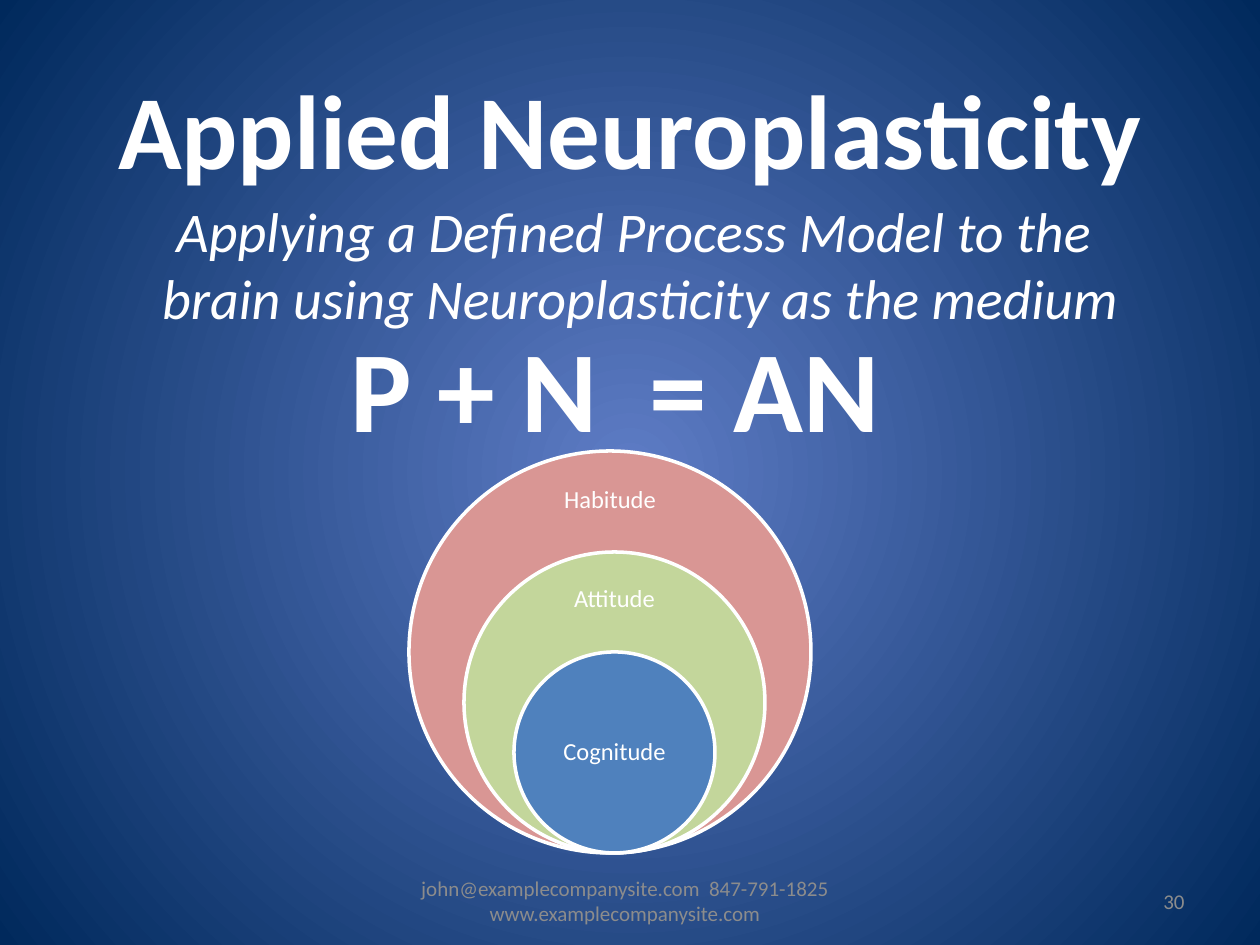
from lxml import etree
from pptx import Presentation
from pptx.dml.color import RGBColor
from pptx.enum.shapes import MSO_SHAPE
from pptx.enum.text import MSO_ANCHOR, MSO_AUTO_SIZE, PP_ALIGN
from pptx.util import Emu, Inches, Pt

OVAL = MSO_SHAPE.OVAL
TOP, MIDDLE = MSO_ANCHOR.TOP, MSO_ANCHOR.MIDDLE
CENTER, RIGHT = PP_ALIGN.CENTER, PP_ALIGN.RIGHT
WHITE = RGBColor(0xFF, 0xFF, 0xFF)
GRAY = RGBColor(0x8C, 0x8C, 0x8C)
GLOW = RGBColor(0x5E, 0x7C, 0xC5)
NAVY = RGBColor(0x00, 0x29, 0x5C)
ROSE = RGBColor(0xD9, 0x96, 0x94)
LIME = RGBColor(0xC3, 0xD6, 0x9B)
BLUE = RGBColor(0x4F, 0x81, 0xBD)
BASE = 853  # the circles all touch this line
LABEL = 142


def px(*nums):
    return [Emu(round(n * 914400 / 126)) for n in nums]


def write(shape, box, text, size, color=WHITE, anchor=TOP, align=CENTER,
          bold=False, italic=False, space=1.0):
    """Place a text shape at a px box, then fill and format it."""
    shape.left, shape.top, shape.width, shape.height = px(*box)
    frame = shape.text_frame
    frame.text = text
    frame.word_wrap = True
    frame.auto_size = MSO_AUTO_SIZE.NONE
    frame.vertical_anchor = anchor
    for para in frame.paragraphs:
        para.alignment = align
        para.space_before = Pt(0)
        para.line_spacing = space
        for run in para.runs:
            font = run.font
            font.name, font.size = "Calibri", Pt(size)
            font.bold, font.italic = bold, italic
            font.color.rgb = color


prs = Presentation()
prs.slide_width, prs.slide_height = Inches(10), Inches(7.5)
slide = prs.slides.add_slide(prs.slide_layouts[0])
shapes = slide.shapes

# Background: a round glow from the centre
fill = slide.background.fill
fill.gradient()
for stop, color, place in zip(fill.gradient_stops, (GLOW, NAVY), (0, 1)):
    stop.color.rgb = color
    stop.position = place
grad = slide.element.xpath(".//p:bg//a:gradFill")[0]
NS = "http://schemas.openxmlformats.org/drawingml/2006/main"
round_path = etree.fromstring(
    f'<a:path xmlns:a="{NS}" path="circle">'
    '<a:fillToRect l="50000" t="50000" r="50000" b="50000"/></a:path>')
grad.replace(grad.find(f"{{{NS}}}lin"), round_path)

# Headings
write(shapes.title, (63, 58, 1134, 140), "Applied Neuroplasticity", 60, bold=True)
write(slide.placeholders[1], (42, 190, 1197, 149),
      "Applying a Defined Process Model to the \n"
      "brain using Neuroplasticity as the medium", 32, italic=True)
write(shapes.add_textbox(0, 0, 0, 0), (300, 311, 630, 152),
      "P + N  = AN", 66, bold=True)

# Nested circles: name, fill, left, size, label top, label height
rings = [
    ("Habitude", ROSE, 409, 402, 471, 60),
    ("Attitude", LIME, 464, 301, 571, 57),
    ("Cognitude", BLUE, 514, 201, 703, 100),
]
for name, color, left, size, top, high in rings:
    ring = shapes.add_shape(OVAL, *px(left, BASE - size, size, size))
    ring.shadow.inherit = False
    ring.fill.solid()
    ring.fill.fore_color.rgb = color
    ring.line.color.rgb = WHITE
    ring.line.width = Pt(2)
    write(shapes.add_textbox(0, 0, 0, 0),
          (left + (size - LABEL) / 2, top, LABEL, high),
          name, 14, anchor=MIDDLE, space=0.9)

# Footer and page number
write(shapes.add_textbox(0, 0, 0, 0), (368, 876, 514, 50),
      "john@examplecompanysite.com  847-791-1825\vwww.examplecompanysite.com",
      12, GRAY, MIDDLE)
write(shapes.add_textbox(0, 0, 0, 0), (903, 876, 294, 50),
      "30", 12, GRAY, MIDDLE, RIGHT)

prs.save("out.pptx")
